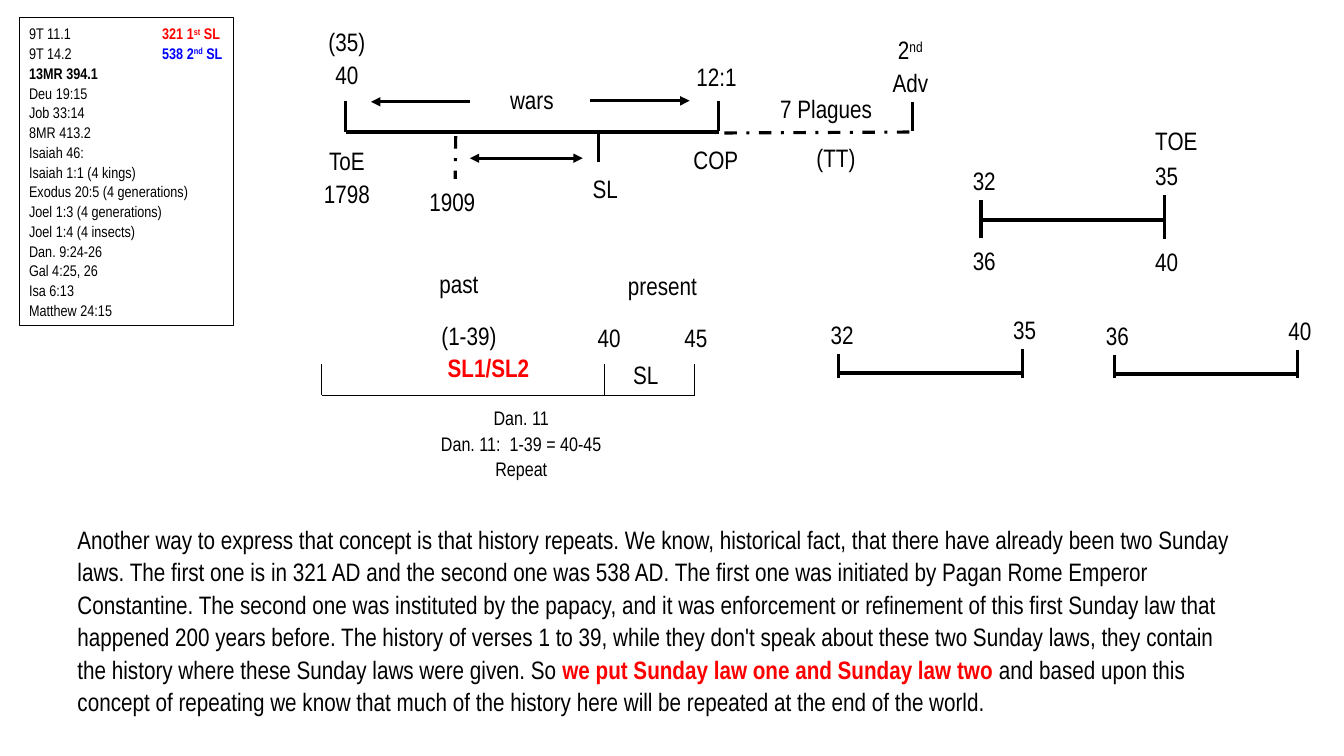
from dataclasses import dataclass

from lxml.etree import SubElement
from pptx import Presentation
from pptx.dml.color import RGBColor
from pptx.enum.dml import MSO_LINE
from pptx.enum.shapes import MSO_CONNECTOR, MSO_SHAPE
from pptx.enum.text import MSO_AUTO_SIZE, PP_ALIGN
from pptx.oxml.ns import qn
from pptx.slide import Slide
from pptx.text.text import _Paragraph
from pptx.util import Emu, Inches, Pt

BLACK = RGBColor(0x00, 0x00, 0x00)
WHITE = RGBColor(0xFF, 0xFF, 0xFF)
RED = RGBColor(0xFF, 0x00, 0x00)
BLUE = RGBColor(0x00, 0x00, 0xFF)

FONT = "Arial Narrow"
CELL = Inches(0.1)
ONE_LINE, TWO_LINES = 4.1, 7.3
NARROW, MEDIUM, WIDE = 5.1, 7, 11.3
LEFT, CENTER = PP_ALIGN.LEFT, PP_ALIGN.CENTER


@dataclass(frozen=True)
class Words:
    text: str
    color: RGBColor = BLACK
    bold: bool = False
    raised: bool = False


Line = str | tuple[Words, ...]


@dataclass(frozen=True)
class Label:
    column: float
    row: float
    lines: tuple[Line, ...]
    columns: float = MEDIUM
    rows: float = ONE_LINE
    align: PP_ALIGN = LEFT
    size: float = 18
    border: RGBColor = WHITE
    tab: float = 0
    first_align: PP_ALIGN | None = None


@dataclass(frozen=True)
class Stroke:
    start: tuple[float, float]
    end: tuple[float, float]
    weight: float = 2.25
    dashed: bool = False
    arrows: tuple[str, ...] = ()


@dataclass(frozen=True)
class Period:
    first: str
    last: str
    column: float
    row: float
    top: float
    bottom: float
    columns: float = 18.2


def grid(cells: float) -> Emu:
    return Emu(round(cells * CELL))


def tick(column: float, top: float, bottom: float, weight: float = 2.25) -> Stroke:
    return Stroke((column, top), (column, bottom), weight)


def level(row: float, left: float, right: float, weight: float = 3) -> Stroke:
    return Stroke((left, row), (right, row), weight)


def draw_stroke(slide: Slide, stroke: Stroke) -> None:
    connector = slide.shapes.add_connector(
        MSO_CONNECTOR.STRAIGHT, *map(grid, stroke.start + stroke.end))
    connector.line.color.rgb = BLACK
    connector.line.width = Pt(stroke.weight)
    if stroke.dashed:
        connector.line.dash_style = MSO_LINE.DASH_DOT
    outline = connector.line._get_or_add_ln()
    for arrow in stroke.arrows:
        SubElement(outline, qn(f"a:{arrow}"), type="triangle")
    SubElement(connector._element.spPr, qn("a:effectLst"))


def write_line(paragraph: _Paragraph, line: Line, label: Label) -> None:
    paragraph.alignment = label.align
    paragraph.line_spacing = 1.07
    if label.tab:
        stops = SubElement(paragraph._p.get_or_add_pPr(), qn("a:tabLst"))
        SubElement(stops, qn("a:tab"), pos=str(grid(label.tab)), algn="l")
    for words in (Words(line),) if isinstance(line, str) else line:
        run = paragraph.add_run()
        run.text = words.text
        run.font.bold = words.bold
        run.font.color.rgb = words.color
        if words.raised:
            run._r.get_or_add_rPr().set("baseline", "30000")
    for font in (paragraph.font, *(run.font for run in paragraph.runs)):
        font.name = FONT
        font.size = Pt(label.size)


def draw_label(slide: Slide, label: Label) -> None:
    box = slide.shapes.add_shape(
        MSO_SHAPE.RECTANGLE,
        *map(grid, (label.column, label.row, label.columns, label.rows)))
    box.shadow.inherit = False
    box.fill.solid()
    box.fill.fore_color.rgb = WHITE
    box.line.color.rgb = label.border
    box.line.width = Pt(0.75)
    frame = box.text_frame
    frame.word_wrap = True
    frame.auto_size = MSO_AUTO_SIZE.SHAPE_TO_FIT_TEXT
    for index, line in enumerate(label.lines):
        paragraph = frame.add_paragraph() if index else frame.paragraphs[0]
        write_line(paragraph, line, label)
    if label.first_align is not None:
        frame.paragraphs[0].alignment = label.first_align


def draw_period(slide: Slide, period: Period) -> None:
    end = period.column + period.columns
    draw_stroke(slide, level(period.row, period.column, end))
    for column in (period.column, end):
        draw_stroke(slide, tick(column, period.top, period.bottom))
    draw_label(slide, Label(period.column - 1.8, period.top - 3.2, (period.first,), 6))
    draw_label(slide, Label(end - 1.9, period.top - 3.7, (period.last,), 6))


STROKES = (
    level(13.1, 34.3, 71.3),
    tick(34.3, 10, 13.1),
    tick(59.4, 13.1, 16.1),
    tick(71.3, 10, 13),
    tick(90.5, 10, 13),
    Stroke((45.2, 13.5), (45.1, 21.9), dashed=True),
    Stroke((90.2, 13.1), (70.9, 13.2), dashed=True),
    Stroke((46.6, 10.1), (36.8, 10.1), arrows=("tailEnd",)),
    Stroke((58.5, 10), (68.4, 10), arrows=("tailEnd",)),
    Stroke((46.6, 15.7), (57.8, 15.7), arrows=("headEnd", "tailEnd")),
    level(39.2, 31.9, 68.9, 0.5),
    *(tick(column, 36.1, 39.2, 0.5) for column in (31.9, 59.9, 68.9)),
)

PERIODS = (
    Period("32", "35", 97.3, 21.8, 18.9, 25.3),
    Period("32", "35", 83.2, 37, 34.2, 37.5),
    Period("36", "40", 110.5, 37.1, 34.3, 37.5),
)

REFERENCES = (
    (Words("9T 11.1\t"), Words("321 1", RED, True), Words("st", RED, True, True),
     Words(" SL", RED, True)),
    (Words("9T 14.2\t"), Words("538 2", BLUE, True), Words("nd", BLUE, True, True),
     Words(" SL", BLUE, True)),
    (Words("13MR 394.1", bold=True),),
    "Deu 19:15", "Job 33:14", "8MR 413.2", "Isaiah 46:", "Isaiah 1:1 (4 kings)",
    "Exodus 20:5 (4 generations)", "Joel 1:3 (4 generations)",
    "Joel 1:4 (4 insects)", "Dan. 9:24-26", "Gal 4:25, 26", "Isa 6:13",
    "Matthew 24:15",
)

LABELS = (
    Label(1.9, 1.7, REFERENCES, 21.3, 30.6, size=11, border=BLACK, tab=13.2),
    Label(30.9, 13.8, ("ToE", "1798"), MEDIUM, TWO_LINES, CENTER),
    Label(57.8, 16.5, ("SL",), NARROW),
    Label(30.9, 2, ("(35)", "40"), MEDIUM, TWO_LINES, CENTER),
    Label(68.1, 5.4, ("12:1",)),
    Label(76.4, 8.6, ("7 Plagues",), WIDE),
    Label(47.7, 7.7, ("wars",), 10.1, align=CENTER),
    Label(41.6, 17.8, ("1909",)),
    Label(67.8, 13.7, ("COP",), 8.6),
    Label(86.8, 2.8, ((Words("2"), Words("nd", raised=True), Words(" Adv")),),
          MEDIUM, TWO_LINES, CENTER),
    Label(80, 13.5, ("(TT)",)),
    Label(95.5, 23.7, ("36",)),
    Label(113.6, 23.8, ("40",)),
    Label(113.6, 11.8, ("TOE",)),
    Label(40.6, 39.7, ("Dan. 11", "Dan. 11:  1-39 = 40-45", "Repeat"),
          22.2, 8.4, CENTER, 14),
    Label(42.8, 31.1, ("(1-39)", (Words("SL1/SL2", RED, True),)),
          WIDE, TWO_LINES, CENTER, first_align=LEFT),
    Label(61.8, 35, ("SL",), NARROW),
    Label(58.3, 31.3, ("40",), NARROW),
    Label(66.9, 31.3, ("45",), NARROW),
    Label(42.6, 26, ("past",), WIDE),
    Label(61.3, 26.2, ("present",), WIDE),
    Label(6.7, 51.3, ((
        Words("Another way to express that concept is that history repeats. We know, historical fact, that there have already been two Sunday laws. The first one is in 321 AD and the second one was 538 AD. The first one was initiated by Pagan Rome Emperor Constantine. The second one was instituted by the papacy, and it was enforcement or refinement of this first Sunday law that happened 200 years before. The history of verses 1 to 39, while they don't speak about these two Sunday laws, they contain the history where these Sunday laws were given. So "),
        Words("we put Sunday law one and Sunday law two ", RED, True),
        Words("and based upon this concept of repeating we know that much of the history here will be repeated at the end of the world.")),),
        117.5, 20.3),
)


def main() -> None:
    deck = Presentation()
    deck.slide_width, deck.slide_height = Inches(13.33), Inches(7.5)
    slide = deck.slides.add_slide(deck.slide_layouts[6])
    for stroke in STROKES:
        draw_stroke(slide, stroke)
    for period in PERIODS:
        draw_period(slide, period)
    for label in LABELS:
        draw_label(slide, label)
    deck.save("out.pptx")


if __name__ == "__main__":
    main()
